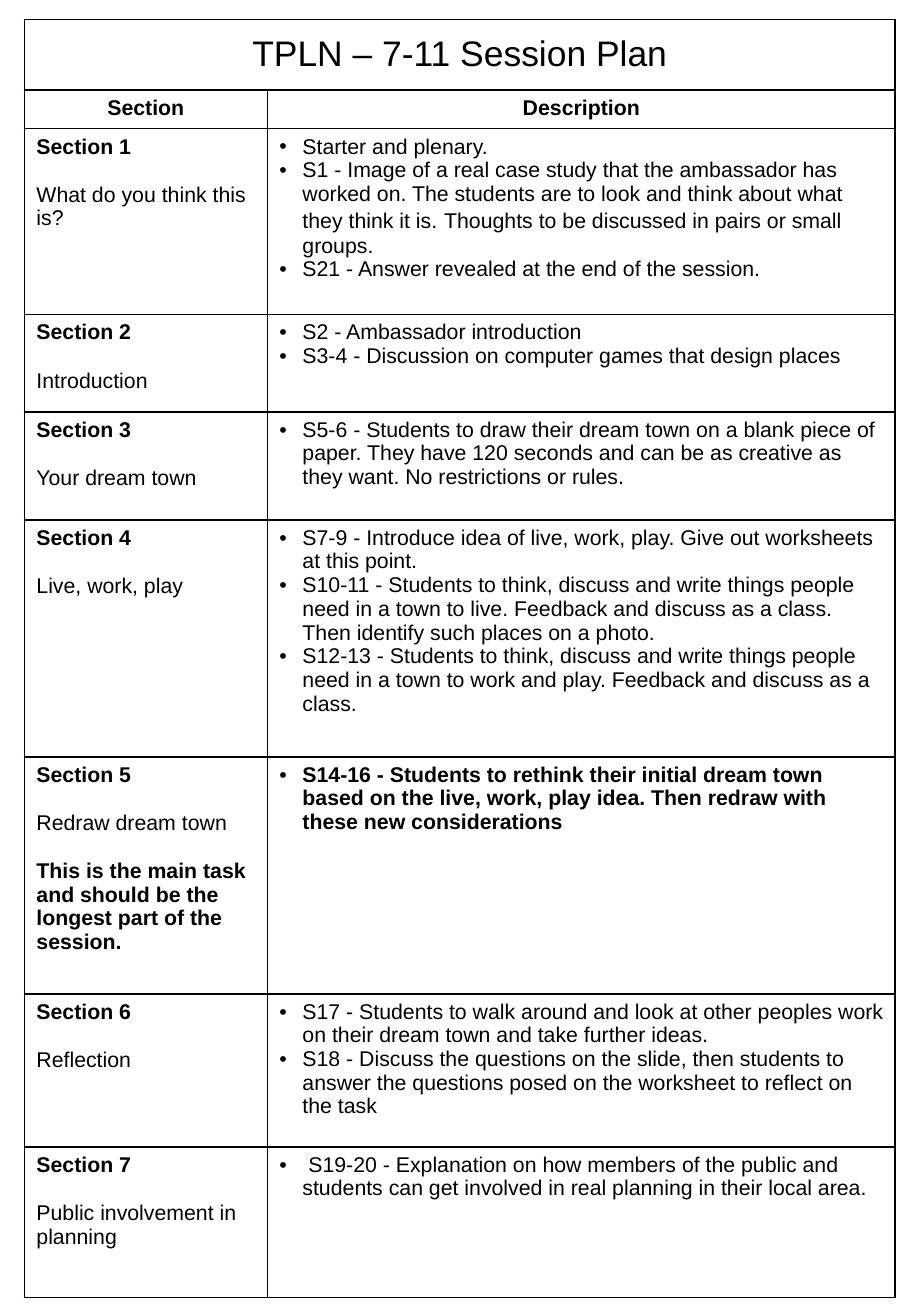
import pptx
import pptx.util
import pptx.dml.color
import pptx.enum.text
import pptx.oxml.ns
from lxml import etree

Inches, Pt = pptx.util.Inches, pptx.util.Pt
BLACK = pptx.dml.color.RGBColor(0, 0, 0)
WHITE = pptx.dml.color.RGBColor(255, 255, 255)
FONT = "Arial"
BODY_SIZE, GAP_SIZE, TITLE_SIZE = 12.6, 15, 21
LINE_GAP = 14.5
BULLET_INDENT = Inches(0.19)

TITLE = "TPLN – 7-11 Session Plan"
HEADINGS = ("Section", "Description")
MAIN_TASK = "This is the main task and should be the longest part of the session."
SECTIONS = [
    ("Section 1", "What do you think this is?", [
        "Starter and plenary.",
        ("S1 - Image of a real case study that the ambassador has worked on. The students are "
         "to look and think about what they think it is.", " ",
         "Thoughts to be discussed in pairs or small groups."),
        "S21 - Answer revealed at the end of the session."]),
    ("Section 2", "Introduction", [
        "S2 - Ambassador introduction",
        "S3-4 - Discussion on computer games that design places"]),
    ("Section 3", "Your dream town", [
        "S5-6 - Students to draw their dream town on a blank piece of paper. They have 120 "
        "seconds and can be as creative as they want. No restrictions or rules."]),
    ("Section 4", "Live, work, play", [
        "S7-9 - Introduce idea of live, work, play. Give out worksheets at this point.",
        "S10-11 - Students to think, discuss and write things people need in a town to live. "
        "Feedback and discuss as a class. Then identify such places on a photo.",
        "S12-13 - Students to think, discuss and write things people need in a town to work "
        "and play. Feedback and discuss as a class."]),
    ("Section 5", "Redraw dream town", [
        "S14-16 - Students to rethink their initial dream town based on the live, work, play "
        "idea. Then redraw with these new considerations"]),
    ("Section 6", "Reflection", [
        "S17 - Students to walk around and look at other peoples work on their dream town "
        "and take further ideas.",
        "S18 - Discuss the questions on the slide, then students to answer the questions "
        "posed on the worksheet to reflect on the task"]),
    ("Section 7", "Public involvement in planning", [
        " S19-20 - Explanation on how members of the public and students can get involved "
        "in real planning in their local area."]),
]
MAIN_SECTION = "Section 5"
COLUMN_WIDTHS = (2, 5.17)
ROW_HEIGHTS = (0.58, 0.32, 1.53, 0.8, 0.89, 1.95, 1.95, 1.26, 1.24)


def add_child(parent, tag, **attributes):
    return etree.SubElement(parent, pptx.oxml.ns.qn(tag), attributes)


def style_cell(cell):
    properties = cell._tc.get_or_add_tcPr()
    for side in ("L", "R", "T", "B"):
        border = add_child(properties, f"a:ln{side}", w=str(Pt(1)))
        add_child(add_child(border, "a:solidFill"), "a:srgbClr", val=str(BLACK))
    cell.fill.solid()
    cell.fill.fore_color.rgb = WHITE


def add_run(paragraph, text, size=BODY_SIZE, bold=False):
    run = paragraph.add_run()
    run.text = text
    run.font.name = FONT
    run.font.size = Pt(size)
    run.font.bold = bold
    run.font.color.rgb = BLACK


def add_centred(cell, text, size=BODY_SIZE, bold=False):
    paragraph = cell.text_frame.paragraphs[0]
    paragraph.alignment = pptx.enum.text.PP_ALIGN.CENTER
    add_run(paragraph, text, size, bold)


def next_paragraph(cell, index):
    frame = cell.text_frame
    return frame.add_paragraph() if index else frame.paragraphs[0]


def fill_section(cell, lines):
    for index, (text, bold) in enumerate(lines):
        paragraph = next_paragraph(cell, index)
        if index:
            paragraph.space_before = Pt(LINE_GAP)
        add_run(paragraph, text, bold=bold)


def fill_description(cell, points, bold):
    for index, point in enumerate(points):
        paragraph = next_paragraph(cell, index)
        properties = paragraph._p.get_or_add_pPr()
        properties.set("marL", str(BULLET_INDENT))
        properties.set("indent", str(-BULLET_INDENT))
        add_child(add_child(properties, "a:buClr"), "a:srgbClr", val=str(BLACK))
        add_child(properties, "a:buFont", typeface=FONT)
        add_child(properties, "a:buChar", char="•")
        for part in (point,) if isinstance(point, str) else point:
            add_run(paragraph, part, GAP_SIZE if part == " " else BODY_SIZE, bold)


def main():
    deck = pptx.Presentation()
    deck.slide_width, deck.slide_height = Inches(7.5), Inches(10.83)
    slide = deck.slides.add_slide(deck.slide_layouts[6])
    plan = slide.shapes.add_table(
        len(ROW_HEIGHTS), len(COLUMN_WIDTHS), Inches(0.2), Inches(0.16),
        Inches(sum(COLUMN_WIDTHS)), Inches(sum(ROW_HEIGHTS))).table
    for column, width in zip(plan.columns, COLUMN_WIDTHS):
        column.width = Inches(width)
    for row, height in zip(plan.rows, ROW_HEIGHTS):
        row.height = Inches(height)
    for cell in plan.iter_cells():
        style_cell(cell)

    title = plan.cell(0, 0)
    title.merge(plan.cell(0, 1))
    title.vertical_anchor = pptx.enum.text.MSO_ANCHOR.MIDDLE
    add_centred(title, TITLE, TITLE_SIZE)
    for column, heading in enumerate(HEADINGS):
        add_centred(plan.cell(1, column), heading, bold=True)

    for row, (section, topic, points) in enumerate(SECTIONS, start=2):
        is_main = section == MAIN_SECTION
        lines = [(section, True), (topic, False)]
        if is_main:
            lines.append((MAIN_TASK, True))
        fill_section(plan.cell(row, 0), lines)
        fill_description(plan.cell(row, 1), points, is_main)

    deck.save("out.pptx")


if __name__ == "__main__":
    main()
